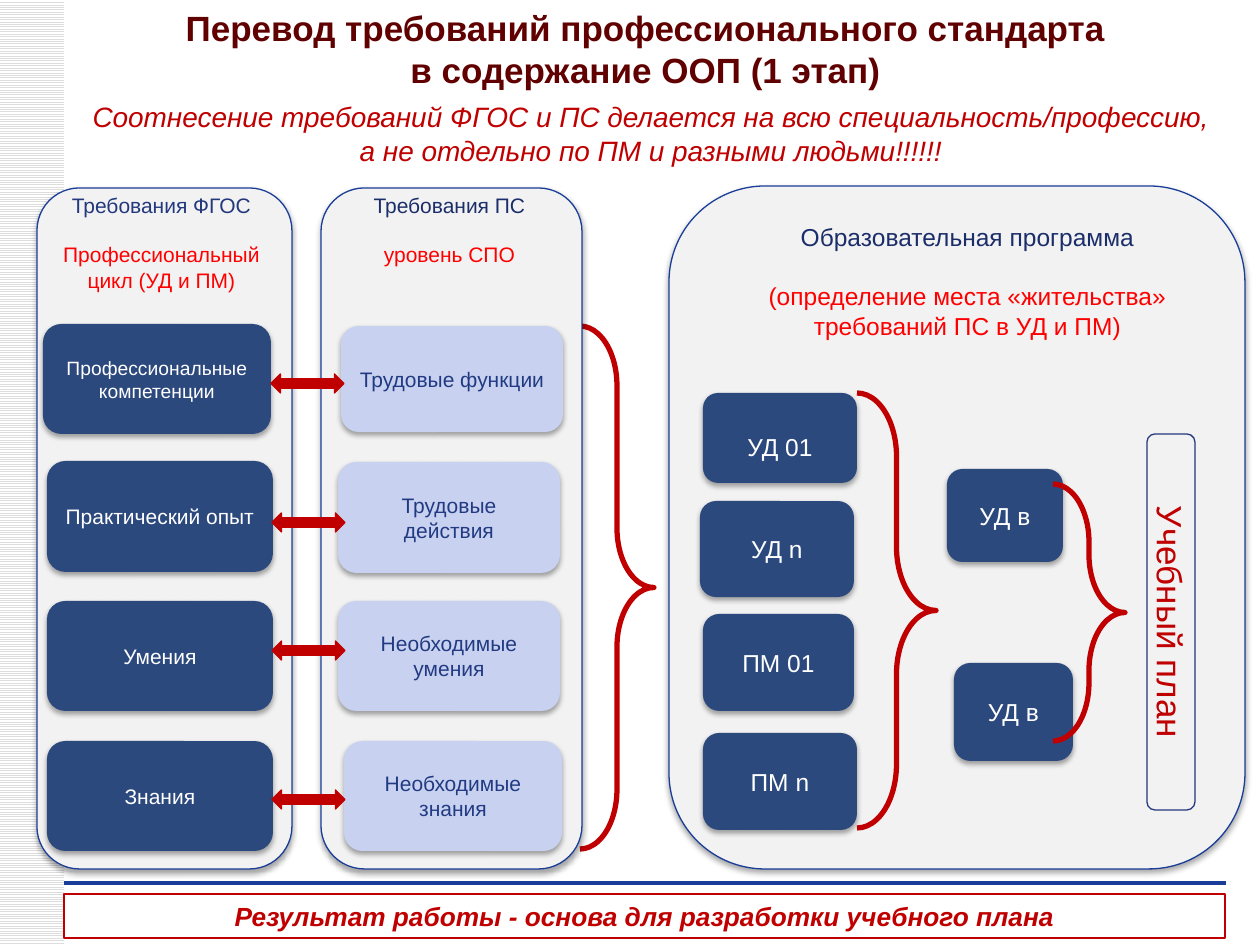
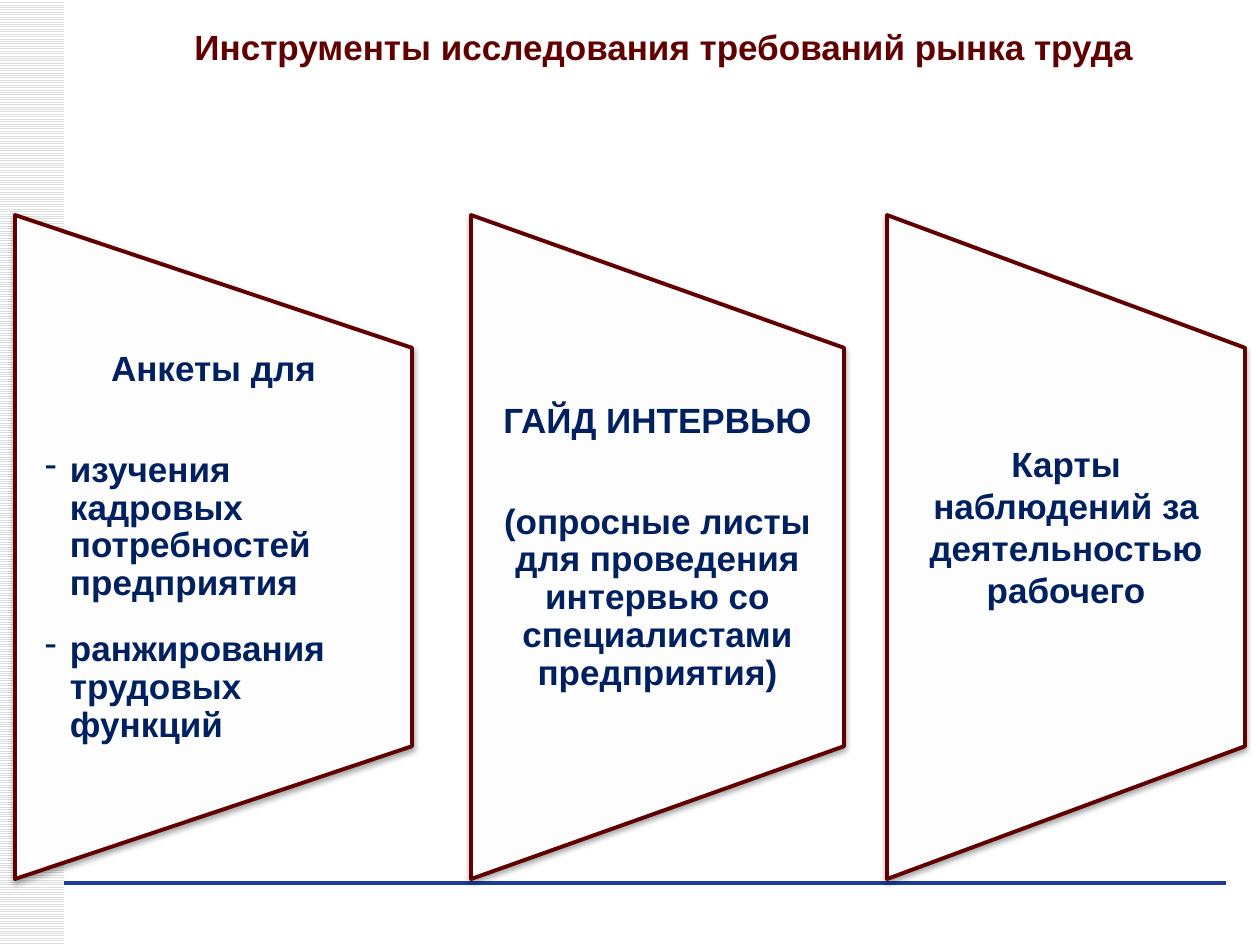
from lxml.etree import SubElement
from pptx import Presentation
from pptx.dml.color import RGBColor
from pptx.enum.dml import MSO_PATTERN
from pptx.enum.shapes import MSO_CONNECTOR, MSO_SHAPE
from pptx.enum.text import MSO_ANCHOR, PP_ALIGN
from pptx.oxml.ns import qn
from pptx.util import Pt

PX = 914400 / 126
WIDTH, HEIGHT = 1260, 945
FONT = "Arial"

WHITE = RGBColor(0xFF, 0xFF, 0xFF)
STRIPE = RGBColor(0xDD, 0xDD, 0xDD)
PANEL = RGBColor(0xF2, 0xF2, 0xF2)
CARD = RGBColor(0xFD, 0xFD, 0xFD)
BLUE = RGBColor(0x1A, 0x3D, 0x97)
DARK = RGBColor(0x2C, 0x49, 0x7E)
LIGHT = RGBColor(0xC8, 0xD2, 0xF0)
LIGHT_TEXT = RGBColor(0x21, 0x3A, 0x82)
HEADING = RGBColor(0x1C, 0x2E, 0x6A)
FGOS_HEADING = RGBColor(0x23, 0x38, 0x7D)
NAVY = RGBColor(0x00, 0x20, 0x60)
MAROON = RGBColor(0x60, 0x00, 0x00)
CRIMSON = RGBColor(0xC0, 0x00, 0x00)
RED = RGBColor(0xFF, 0x00, 0x00)

MATCHES = [
    ("Профессиональные компетенции", 11, (43, 324, 228, 110),
     "Трудовые функции", (341, 326, 222, 106), (271, 374)),
    ("Практический опыт", 12, (47, 461, 226, 111),
     "Трудовые действия", (338, 462, 222, 111), (272, 513)),
    ("Умения", 12, (47, 601, 226, 110),
     "Необходимые умения", (338, 601, 222, 110), (272, 641)),
    ("Знания", 12, (47, 741, 226, 110),
     "Необходимые знания", (344, 741, 218, 110), (272, 790)),
]
MODULES = [
    ("УД 01", (703, 393, 154, 90)),
    ("УД n", (700, 501, 154, 96)),
    ("ПМ 01", (703, 614, 151, 97)),
    ("ПМ n", (703, 733, 154, 97)),
    ("УД в", (947, 469, 116, 93)),
    ("УД в", (954, 663, 119, 98)),
]


def emu(*lengths):
    """Turn px lengths into EMU."""
    return [round(n * PX) for n in lengths]


def add_shadow(sp):
    """Give a shape the soft shadow below it."""
    effects = SubElement(sp._element.spPr, qn("a:effectLst"))
    shadow = SubElement(effects, qn("a:outerShdw"), blurRad="39370",
                        dist="22860", dir="5400000", rotWithShape="0")
    color = SubElement(shadow, qn("a:srgbClr"), val="000000")
    SubElement(color, qn("a:alpha"), val="35000")


def add_figure(s, kind, at, fill=None, line=None, width=0.75, shadow=False):
    """Add a preset shape with the given fill, outline and shadow."""
    sp = s.shapes.add_shape(kind, *emu(*at))
    if fill is None:
        sp.fill.background()
    else:
        sp.fill.solid()
        sp.fill.fore_color.rgb = fill
    if line is None:
        sp.line.fill.background()
    else:
        sp.line.color.rgb = line
        sp.line.width = Pt(width)
    if shadow:
        add_shadow(sp)
    else:
        sp.shadow.inherit = False
    return sp


def write(sp, lines, size, color, bold=False, italic=False,
          anchor=MSO_ANCHOR.MIDDLE, margin=12):
    """Write centred paragraphs into a shape and return its text frame."""
    tf = sp.text_frame
    tf.word_wrap = True
    tf.vertical_anchor = anchor
    tf.margin_left, tf.margin_right = emu(margin, margin)
    tf.text = "\n".join(lines)
    for p in tf.paragraphs:
        p.alignment = PP_ALIGN.CENTER
        for r in p.runs:
            r.font.name = FONT
            r.font.size = Pt(size)
            r.font.bold = bold
            r.font.italic = italic
            r.font.color.rgb = color
    return tf


def add_text(s, at, lines, size, color, **style):
    """Add a text box with centred paragraphs."""
    return write(s.shapes.add_textbox(*emu(*at)), lines, size, color, **style)


def add_panel(s, at):
    """Add a large rounded background panel."""
    add_figure(s, MSO_SHAPE.ROUNDED_RECTANGLE, at, PANEL, BLUE, shadow=True)


def add_heading(s, at, title, notes, size, color, gap):
    """Add a panel heading with red notes set apart below it."""
    tf = add_text(s, at, [title, *notes], size, color, anchor=MSO_ANCHOR.TOP)
    tf.paragraphs[1].space_before = Pt(gap)
    for p in tf.paragraphs[1:]:
        p.runs[0].font.color.rgb = RED


def add_box(s, at, text, size, fill=DARK, color=WHITE, margin=6):
    """Add a labelled rounded box."""
    sp = add_figure(s, MSO_SHAPE.ROUNDED_RECTANGLE, at, fill, shadow=True)
    return write(sp, [text], size, color, margin=margin)


def add_brace(s, at):
    """Add a right brace."""
    sp = add_figure(s, MSO_SHAPE.RIGHT_BRACE, at, line=CRIMSON, width=3)
    sp.adjustments[0] = 0.806


def add_card(s, left, width, lines):
    """Add a tapering card with upright text and return its text frame."""
    top, height = 215, 664
    shift = (height - width) / 2
    sp = add_figure(s, MSO_SHAPE.FLOWCHART_MANUAL_OPERATION,
                    (left - shift, top + shift, height, width),
                    CARD, MAROON, 2.25, shadow=True)
    sp.rotation = 270
    return add_text(s, (left, 349, width, 398), lines, 20, NAVY,
                    bold=True, margin=18)


def add_dash(p):
    """Make a paragraph a left-aligned dash bullet."""
    p.alignment = PP_ALIGN.LEFT
    indent, hanging = emu(37, 25)
    pPr = p._p.get_or_add_pPr()
    pPr.set("marL", str(indent))
    pPr.set("indent", str(-hanging))
    SubElement(pPr, qn("a:buChar"), char="-")


def add_base(prs, title, title_at):
    """Add a slide with the striped band, the bottom rule and a title."""
    s = prs.slides.add_slide(prs.slide_layouts[6])
    band = add_figure(s, MSO_SHAPE.RECTANGLE, (0, 0, 64, HEIGHT))
    band.fill.patterned()
    band.fill.pattern = MSO_PATTERN.LIGHT_HORIZONTAL
    band.fill.fore_color.rgb = STRIPE
    band.fill.back_color.rgb = WHITE
    rule = s.shapes.add_connector(MSO_CONNECTOR.STRAIGHT, *emu(64, 883, 1226, 883))
    rule.line.color.rgb = BLUE
    rule.line.width = Pt(0)
    SubElement(rule._element.spPr, qn("a:effectLst"))
    add_text(s, title_at, title, 20, MAROON, bold=True)
    return s


def build_mapping(prs):
    """Build the slide that maps the standard onto the programme."""
    s = add_base(prs, ["Перевод требований профессионального стандарта",
                       "в содержание ООП (1 этап)"], (33, 0, 1225, 97))
    add_text(s, (60, 93, 1182, 81),
             ["Соотнесение требований ФГОС и ПС делается на всю специальность/профессию,",
              "а не отдельно по ПМ и разными людьми!!!!!!"],
             16, CRIMSON, italic=True)

    add_brace(s, (580, 326, 74, 523))
    for at in [(37, 188, 255, 681), (321, 188, 261, 681), (669, 186, 576, 683)]:
        add_panel(s, at)
    add_heading(s, (43, 186, 237, 115), "Требования ФГОС",
                ["Профессиональный", "цикл (УД и ПМ)"], 12, FGOS_HEADING, 14)
    add_heading(s, (331, 186, 237, 90), "Требования ПС",
                ["уровень СПО"], 12, HEADING, 14)
    add_heading(s, (670, 216, 595, 131), "Образовательная программа",
                ["(определение места «жительства»", "требований ПС в УД и ПМ)"],
                14, HEADING, 17)

    for skill, size, skill_at, duty, duty_at, arrow_at in MATCHES:
        add_box(s, skill_at, skill, size)
        add_box(s, duty_at, duty, 12, LIGHT, LIGHT_TEXT, margin=12)
        add_figure(s, MSO_SHAPE.LEFT_RIGHT_ARROW, (*arrow_at, 73, 19), CRIMSON, CRIMSON)

    frames = [add_box(s, at, text, 14) for text, at in MODULES]
    frames[0].margin_top = emu(24)[0]
    add_brace(s, (857, 393, 79, 435))
    add_brace(s, (1053, 484, 72, 257))

    plan = add_figure(s, MSO_SHAPE.ROUNDED_RECTANGLE, (1147, 434, 48, 376),
                      line=FGOS_HEADING)
    tf = write(plan, ["Учебный план"], 20, CRIMSON, margin=0)
    tf.margin_top = tf.margin_bottom = 0
    tf._txBody.bodyPr.set("vert", "vert")

    result = add_figure(s, MSO_SHAPE.RECTANGLE, (64, 894, 1161, 44), WHITE, CRIMSON)
    write(result, ["Результат работы - основа для разработки учебного плана"],
          15, CRIMSON, bold=True, italic=True)


def build_tools(prs):
    """Build the slide that lists the research tools."""
    s = add_base(prs, ["Инструменты исследования требований рынка труда"],
                 (84, 8, 1160, 78))
    surveys = add_card(s, 15, 397, [
        "Анкеты для", "изучения кадровых потребностей предприятия",
        "ранжирования трудовых функций"])
    guide = add_card(s, 471, 373, [
        "ГАЙД ИНТЕРВЬЮ",
        "(опросные листы для проведения интервью со специалистами предприятия)"])
    maps = add_card(s, 887, 358, ["Карты наблюдений за деятельностью рабочего"])
    maps.margin_bottom = emu(50)[0]

    for tf, gaps in [(surveys, [0, 36, 16]), (guide, [0, 36])]:
        for p, gap in zip(tf.paragraphs, gaps):
            p.line_spacing = 0.9
            p.space_before = Pt(gap)
    for p in surveys.paragraphs[1:]:
        add_dash(p)


def main():
    """Build and save the presentation."""
    prs = Presentation()
    prs.slide_width, prs.slide_height = emu(WIDTH, HEIGHT)
    build_mapping(prs)
    build_tools(prs)
    prs.save("out.pptx")


if __name__ == "__main__":
    main()
